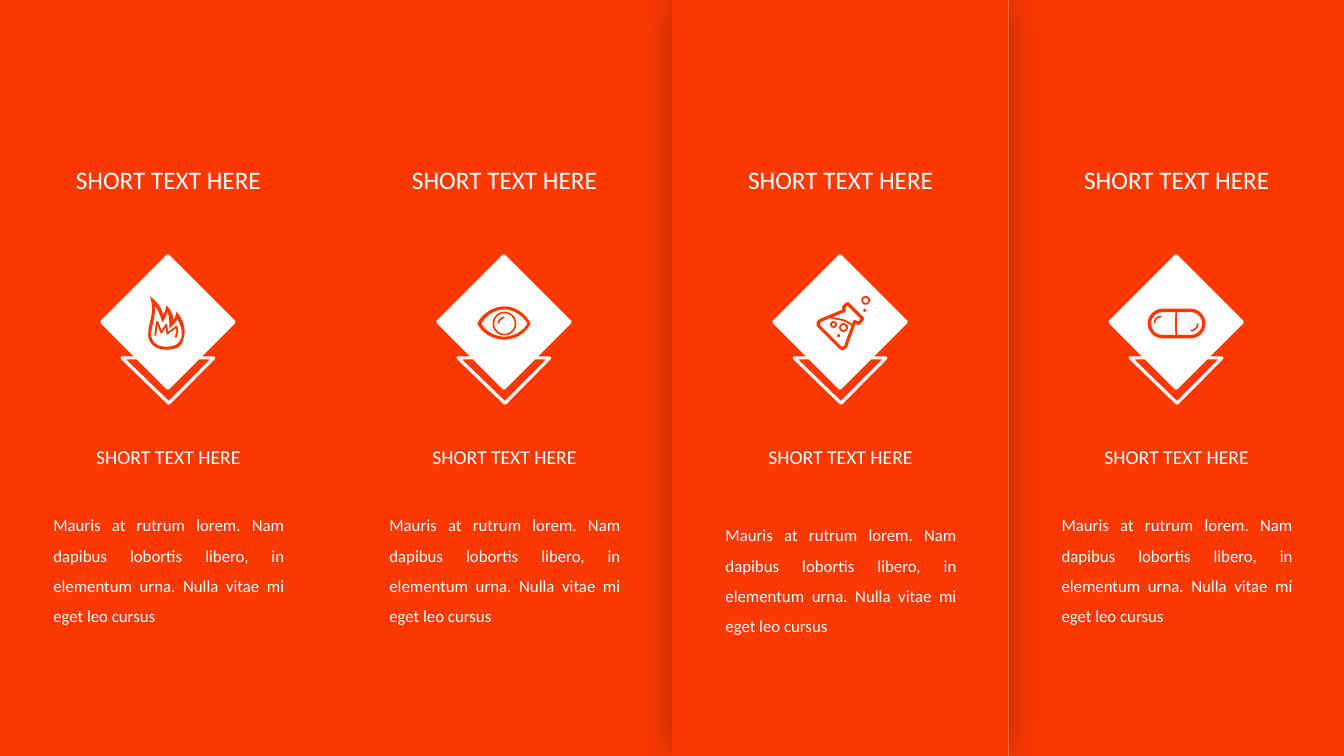
from lxml import etree
from pptx import Presentation
from pptx import util as u
from pptx.dml import color
from pptx.enum import shapes, text
from pptx.oxml import ns

theme = {
    "red": color.RGBColor.from_string("FC3903"),
    "white": color.RGBColor.from_string("FFFFFF"),
    "font": "Calibri", "head": 18, "label": 14, "body": 12,
}
kinds = shapes.MSO_SHAPE
align = text.PP_ALIGN
pitch = 40 / 12


def style(shape, fill=None, line=None, wide=0):
    shape.shadow.inherit = False
    if fill:
        shape.fill.solid()
        shape.fill.fore_color.rgb = theme[fill]
    else:
        shape.fill.background()
    if line:
        shape.line.color.rgb = theme[line]
        shape.line.width = u.Pt(wide)
    else:
        shape.line.fill.background()
    return shape


def bend(points, steps=8):
    curve = [points[0]]
    for i in range(0, len(points) - 1, 3):
        a, b, c, d = points[i:i + 4]
        for n in range(1, steps + 1):
            t = n / steps
            s = 1 - t
            curve.append(tuple(
                s**3 * a[k] + 3 * s * s * t * b[k] + 3 * s * t * t * c[k] + t**3 * d[k]
                for k in (0, 1)))
    return curve


deck = Presentation()
deck.slide_width, deck.slide_height = u.Inches(13.33), u.Inches(7.5)
slide = deck.slides.add_slide(deck.slide_layouts[5])
items = slide.shapes

for col in (0, 1, 3, 2):
    panel = style(items.add_shape(kinds.RECTANGLE, u.Inches(col * pitch), 0,
                                  u.Inches(pitch), u.Inches(7.5)), "red")
    if col == 2:
        glow = etree.SubElement(panel.element.spPr.find(ns.qn("a:effectLst")),
                                ns.qn("a:outerShdw"), blurRad=str(u.Pt(30)), dist="0", dir="0",
                                algn="ctr", rotWithShape="0")
        tint = etree.SubElement(glow, ns.qn("a:srgbClr"), val="000000")
        etree.SubElement(tint, ns.qn("a:alpha"), val="27000")

short = "SHORT TEXT HERE"
story = ("Mauris at rutrum lorem. Nam dapibus lobortis libero, in elementum urna. "
         "Nulla vitae mi eget leo cursus")

for col in range(4):
    left = col * pitch
    wedge = style(items.add_shape(kinds.ISOSCELES_TRIANGLE, u.Inches(left + 1.21), u.Inches(3.55),
                                  u.Inches(0.91), u.Inches(0.45)), None, "white", 2.25)
    wedge.adjustments[0] = 0.49
    wedge.rotation = 180
    gem = style(items.add_shape(kinds.RECTANGLE, u.Inches(left + 1.2), u.Inches(2.73),
                                u.Inches(0.93), u.Inches(0.93)), "white", "white", 2.25)
    gem.rotation = 45

    rows = [
        ("head", short, 0.21, 1.43, 2.92, 0.51, align.CENTER),
        ("label", short, 0.21, 4.25, 2.92, 0.42, align.CENTER),
        ("body", story, 0.43, 5.06 if col == 2 else 4.96, 2.49, 1.31, align.JUSTIFY),
    ]
    for role, words, x, y, w, h, side in rows:
        if role == "head" and col == 0:
            box = items.title
            items.element.append(box.element)
        else:
            box = items.add_textbox(0, 0, 0, 0)
        box.left, box.top = u.Inches(left + x), u.Inches(y)
        box.width, box.height = u.Inches(w), u.Inches(h)
        frame = box.text_frame
        frame.word_wrap = True
        frame.auto_size = text.MSO_AUTO_SIZE.SHAPE_TO_FIT_TEXT
        frame.vertical_anchor = text.MSO_ANCHOR.TOP
        para = frame.paragraphs[0]
        para.alignment = side
        para.line_spacing = 1.5
        run = para.add_run()
        run.text = words
        run.font.name = theme["font"]
        run.font.size = u.Pt(theme[role])
        run.font.color.rgb = theme["white"]

flame = bend([
    (1.75, 3.09), (1.75, 3.14), (1.72, 3.17), (1.72, 3.17), (1.72, 3.09), (1.65, 3.03),
    (1.65, 3.03), (1.65, 3.03), (1.65, 3.07), (1.62, 3.12), (1.59, 3.01), (1.49, 2.94),
    (1.49, 2.94), (1.54, 3.12), (1.47, 3.19), (1.47, 3.32), (1.47, 3.4), (1.54, 3.47),
    (1.64, 3.47), (1.78, 3.47), (1.81, 3.42), (1.82, 3.36), (1.85, 3.27), (1.82, 3.17),
    (1.75, 3.09)])
core = bend([
    (1.8, 3.35), (1.78, 3.39), (1.77, 3.44), (1.64, 3.44), (1.55, 3.44), (1.5, 3.38),
    (1.5, 3.32), (1.5, 3.28), (1.51, 3.24), (1.52, 3.2), (1.53, 3.15), (1.54, 3.1),
    (1.54, 3.04), (1.59, 3.11), (1.61, 3.2), (1.61, 3.2), (1.61, 3.2), (1.65, 3.14),
    (1.66, 3.1), (1.68, 3.12), (1.68, 3.19), (1.68, 3.26), (1.68, 3.26), (1.73, 3.22),
    (1.76, 3.17), (1.8, 3.23), (1.81, 3.29), (1.8, 3.35)])
spark = [(1.54, 3.33), (1.55, 3.24), (1.56, 3.19), (1.6, 3.3), (1.65, 3.22),
         (1.66, 3.31), (1.75, 3.24), (1.76, 3.29), (1.74, 3.35)]
lid = bend([
    (1.4, 3.21), (1.45, 3.11), (1.56, 3.04), (1.67, 3.04), (1.78, 3.04), (1.88, 3.11),
    (1.93, 3.21), (1.88, 3.31), (1.78, 3.37), (1.67, 3.37), (1.56, 3.37), (1.45, 3.31),
    (1.4, 3.21)])
ball = bend([
    (1.44, 3.21), (1.49, 3.13), (1.57, 3.07), (1.67, 3.07), (1.76, 3.07), (1.85, 3.13),
    (1.9, 3.21), (1.85, 3.29), (1.76, 3.34), (1.67, 3.34), (1.57, 3.34), (1.49, 3.29),
    (1.44, 3.21)])
flask = [(1.74, 3.01), (1.89, 3.16), (1.85, 3.21), (1.81, 3.19), (1.72, 3.44), (1.69, 3.46),
         (1.67, 3.45), (1.45, 3.23), (1.45, 3.2), (1.47, 3.18), (1.71, 3.08), (1.7, 3.05),
         (1.74, 3.01)]

marks = [
    (0, [flame, core], 0),
    (0, [spark], 1.3),
    (1, [lid, ball], 0),
    (1, [bend([(1.61, 3.21), (1.61, 3.18), (1.64, 3.15), (1.67, 3.15)])], 1.3),
    (2, [flask], 2.25),
    (2, [bend([(1.57, 3.15), (1.64, 3.17), (1.71, 3.16), (1.79, 3.23)])], 1.3),
    (3, [bend([(1.67, 3.08), (1.66, 3.15), (1.66, 3.26), (1.67, 3.33)])], 1.3),
    (3, [bend([(1.45, 3.21), (1.45, 3.17), (1.48, 3.14), (1.52, 3.14)])], 1.2),
    (3, [bend([(1.88, 3.21), (1.88, 3.25), (1.85, 3.28), (1.81, 3.28)])], 1.2),
]
for col, loops, wide in marks:
    pen = None
    for loop in loops:
        spots = [(u.Inches(col * pitch + x), u.Inches(y)) for x, y in loop]
        if pen is None:
            pen = items.build_freeform(*spots[0], scale=1.0)
        else:
            pen.move_to(*spots[0])
        pen.add_line_segments(spots[1:], close=loop[0] == loop[-1])
    style(pen.convert_to_shape(), None if wide else "red", "red" if wide else None, wide)

rings = [
    (1, 1.67, 3.21, 0.22, 1.2),
    (2, 1.7, 3.25, 0.07, 1.3),
    (2, 1.92, 2.98, 0.07, 1.3),
    (2, 1.6, 3.22, 0.05, 1.3),
    (2, 1.65, 3.33, 0.03, 0),
    (2, 1.91, 3.08, 0.03, 0),
]
for col, x, y, size, wide in rings:
    ring = items.add_shape(kinds.OVAL, u.Inches(col * pitch + x - size / 2),
                           u.Inches(y - size / 2), u.Inches(size), u.Inches(size))
    style(ring, None if wide else "red", "red" if wide else None, wide)

pill = style(items.add_shape(kinds.ROUNDED_RECTANGLE, u.Inches(3 * pitch + 1.4), u.Inches(3.08),
                             u.Inches(0.54), u.Inches(0.26)), None, "red", 2.4)
pill.adjustments[0] = 0.5

deck.save("out.pptx")
